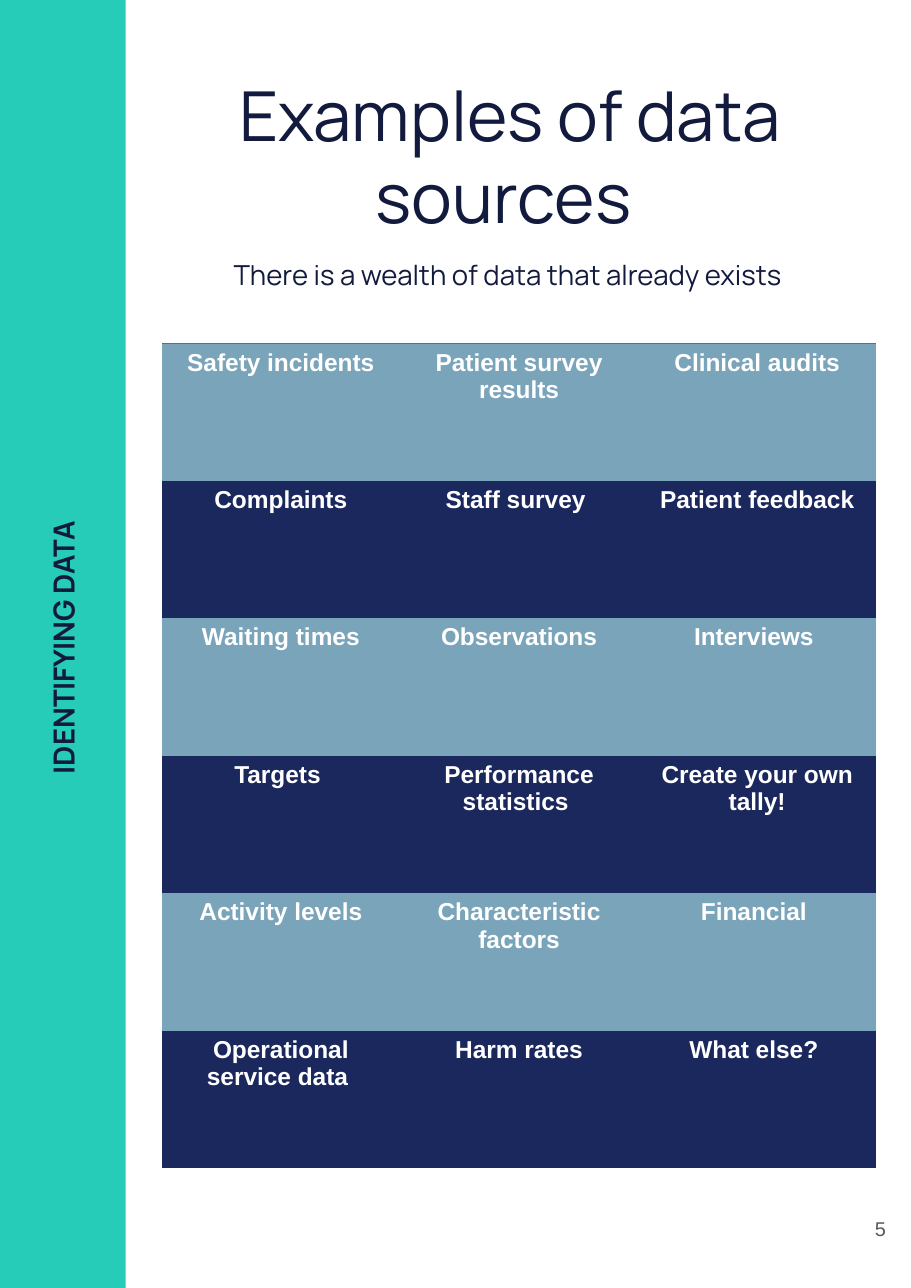
from dataclasses import dataclass

from lxml.etree import SubElement
from pptx import Presentation
from pptx.dml.color import RGBColor
from pptx.enum.shapes import MSO_SHAPE
from pptx.enum.text import MSO_ANCHOR, MSO_AUTO_SIZE, PP_ALIGN
from pptx.oxml.ns import qn
from pptx.util import Cm, Pt

NAVY, TEAL, WHITE, GREY = "121A3D", "26CCB8", "FFFFFF", "595959"
ROW_FILLS = ("7AA4BA", "1B285D")
RULE_COLOUR = "0097A7"
NO_STYLE_NO_GRID = "{2D5ABB26-0587-4C30-8999-92F81FD0307C}"
COLUMN_WIDTH, ROW_HEIGHT = 5.49, 3.17

DATA_SOURCES = (
    ("Safety incidents", "Patient survey results", "Clinical audits"),
    ("Complaints", "Staff survey ", "Patient feedback"),
    ("Waiting times", "Observations", "Interviews "),
    ("Targets ", "Performance statistics ", "Create your own tally!"),
    ("Activity levels", "Characteristic factors", "Financial "),
    ("Operational service data ", "Harm rates", "What else? "),
)


@dataclass(frozen=True)
class Line:
    """One paragraph of text and its look."""
    text: str
    size: float
    font: str
    colour: str
    bold: bool = False
    align: PP_ALIGN = PP_ALIGN.CENTER
    spacing: float = 1.0
    before: float = 0


@dataclass(frozen=True)
class Block:
    """A placed text box, with lengths in centimetres."""
    left: float
    top: float
    width: float
    height: float
    lines: tuple[Line, ...]
    inset: float = 0.25
    rotation: float = 0
    anchor: MSO_ANCHOR = MSO_ANCHOR.TOP
    fit: MSO_AUTO_SIZE = MSO_AUTO_SIZE.SHAPE_TO_FIT_TEXT


HEADING = Block(2.9, 1.42, 17.73, 5.61, (
    Line("Examples of data sources ", 45, "Manrope", NAVY),
    Line("There is a wealth of data that already exists ", 18, "Manrope", NAVY,
         spacing=1.15, before=10),
))
SECTION_LABEL = Block(-11.99, 14.2, 26.9, 1.32, (
    Line("IDENTIFYING DATA ", 19, "Manrope", NAVY, bold=True),
), rotation=270)
PAGE_NUMBER = Block(19.48, 27.2, 1.27, 2.26, (
    Line("5", 13, "Arial", GREY, align=PP_ALIGN.RIGHT),
), inset=0.33, anchor=MSO_ANCHOR.MIDDLE, fit=MSO_AUTO_SIZE.NONE)


def colour(code: str) -> RGBColor:
    """Turn a hex string into a colour."""
    return RGBColor.from_string(code)


def write_lines(frame, lines: tuple[Line, ...]) -> None:
    """Write each line as a paragraph with one run."""
    for index, line in enumerate(lines):
        para = frame.add_paragraph() if index else frame.paragraphs[0]
        para.alignment = line.align
        para.line_spacing = line.spacing
        para.space_before = Pt(line.before)
        span = para.add_run()
        span.text = line.text
        span.font.size = Pt(line.size)
        span.font.name = line.font
        span.font.bold = line.bold
        span.font.color.rgb = colour(line.colour)


def fill_block(box, block: Block) -> None:
    """Place a text shape and write its lines."""
    box.left, box.top = Cm(block.left), Cm(block.top)
    box.width, box.height = Cm(block.width), Cm(block.height)
    box.rotation = block.rotation
    frame = box.text_frame
    frame.word_wrap = True
    frame.auto_size = block.fit
    frame.vertical_anchor = block.anchor
    frame.margin_left = frame.margin_right = Cm(block.inset)
    frame.margin_top = frame.margin_bottom = Cm(block.inset)
    write_lines(frame, block.lines)


def add_block(page, block: Block) -> None:
    """Add a text box to the page."""
    fill_block(page.shapes.add_textbox(0, 0, 0, 0), block)


def add_side_band(page) -> None:
    """Draw the coloured band along the left edge."""
    band = page.shapes.add_shape(MSO_SHAPE.RECTANGLE, 0, 0, Cm(2.9), Cm(29.7))
    band.shadow.inherit = False
    band.fill.solid()
    band.fill.fore_color.rgb = colour(TEAL)
    band.line.fill.background()


def rule_cell(cell, has_top_rule: bool) -> None:
    """Clear the cell borders, apart from a top rule where wanted."""
    properties = cell._tc.get_or_add_tcPr()
    for index, edge in enumerate(("a:lnL", "a:lnR", "a:lnT", "a:lnB")):
        line = properties.makeelement(qn(edge), {"w": str(Pt(1))})
        properties.insert(index, line)
        if edge == "a:lnT" and has_top_rule:
            paint = SubElement(line, qn("a:solidFill"))
            SubElement(paint, qn("a:srgbClr"), {"val": RULE_COLOUR})
        else:
            SubElement(line, qn("a:noFill"))


def add_source_table(page) -> None:
    """Draw the table of data sources in alternating row colours."""
    row_count, column_count = len(DATA_SOURCES), len(DATA_SOURCES[0])
    table = page.shapes.add_table(
        row_count, column_count, Cm(3.73), Cm(7.92),
        Cm(COLUMN_WIDTH * column_count), Cm(ROW_HEIGHT * row_count)).table
    table.first_row = table.horz_banding = False
    table._tbl.tblPr.find(qn("a:tableStyleId")).text = NO_STYLE_NO_GRID
    for column in table.columns:
        column.width = Cm(COLUMN_WIDTH)
    for row_index, sources in enumerate(DATA_SOURCES):
        table.rows[row_index].height = Cm(ROW_HEIGHT)
        for column_index, source in enumerate(sources):
            cell = table.cell(row_index, column_index)
            cell.fill.solid()
            cell.fill.fore_color.rgb = colour(ROW_FILLS[row_index % 2])
            rule_cell(cell, row_index == 0)
            write_lines(cell.text_frame, (Line(source, 16, "Arial", WHITE, bold=True),))


def main() -> None:
    """Build the slide and save it."""
    deck = Presentation()
    deck.slide_width, deck.slide_height = Cm(21), Cm(29.7)
    page = deck.slides.add_slide(deck.slide_layouts[5])
    add_side_band(page)
    fill_block(page.shapes.title, HEADING)
    add_block(page, SECTION_LABEL)
    add_source_table(page)
    add_block(page, PAGE_NUMBER)
    deck.save("out.pptx")


if __name__ == "__main__":
    main()
